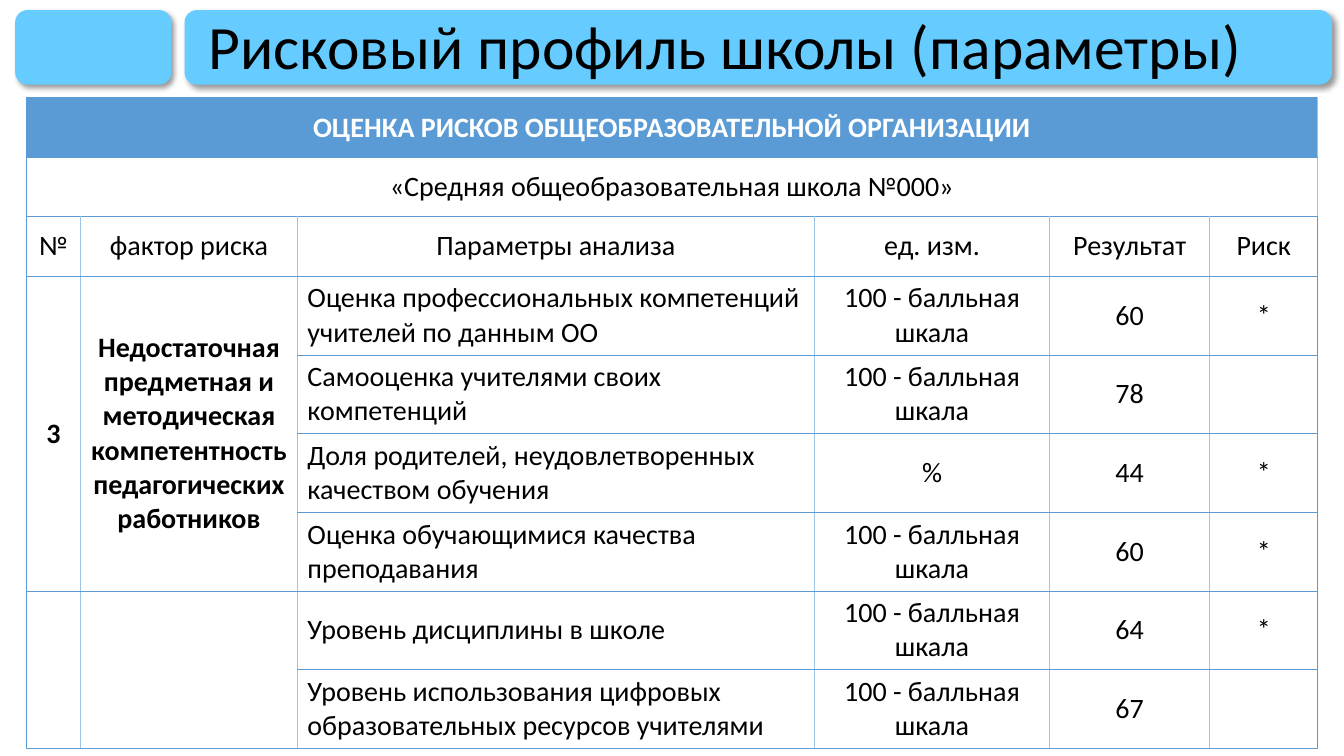
from dataclasses import dataclass

from lxml import etree
from pptx import Presentation
from pptx.dml.color import RGBColor
from pptx.enum import shapes, text
from pptx.oxml import ns
from pptx.util import Inches, Pt

FONT = "Calibri"
SKY, BLUE, PALE, BLACK, WHITE = "66CCFF", "5B9BD5", "9DC3E6", "000000", "FFFFFF"
SCALE = "100 - балльная шкала"
COLUMN_WIDTHS = [0.54, 2.15, 5.13, 2.33, 1.59, 1.07]
HEADINGS = ["№", "фактор риска", "Параметры анализа", "ед. изм.", "Результат", "Риск"]
BANNERS = ["ОЦЕНКА РИСКОВ ОБЩЕОБРАЗОВАТЕЛЬНОЙ ОРГАНИЗАЦИИ",
           "«Средняя общеобразовательная школа №000»"]
HEADER_ROWS = len(BANNERS) + 1


@dataclass
class Bar:
    left: float
    width: float


@dataclass
class Parameter:
    name: str
    unit: str
    result: str
    risk: str = ""


@dataclass
class Factor:
    number: str
    name: str
    parameters: list[Parameter]


BARS = [Bar(1.83, 11.38), Bar(0.15, 1.55)]
FACTORS = [
    Factor("3", "Недостаточная предметная и методическая компетентность "
                "педагогических работников", [
        Parameter("Оценка профессиональных компетенций учителей по данным ОО", SCALE, "60", "*"),
        Parameter("Самооценка учителями своих компетенций", SCALE, "78"),
        Parameter("Доля родителей, неудовлетворенных качеством обучения", "%", "44", "*"),
        Parameter("Оценка обучающимися качества преподавания", SCALE, "60", "*"),
    ]),
    Factor("", "", [
        Parameter("Уровень дисциплины в школе", SCALE, "64", "*"),
        Parameter("Уровень использования цифровых образовательных ресурсов учителями",
                  SCALE, "67"),
    ]),
]


def color(value: str) -> RGBColor:
    return RGBColor.from_string(value)


def add_child(parent, tag: str, **attributes):
    return etree.SubElement(parent, ns.qn(tag), attributes)


def add_run(paragraph, words: str, size: float, fill: str = BLACK, bold: bool = False) -> None:
    run = paragraph.add_run()
    run.text = words
    run.font.name, run.font.size, run.font.bold = FONT, Pt(size), bold
    run.font.color.rgb = color(fill)


def add_bar(slide, bar: Bar) -> None:
    shape = slide.shapes.add_shape(shapes.MSO_SHAPE.ROUNDED_RECTANGLE, Inches(bar.left),
                                   Inches(0.1), Inches(bar.width), Inches(0.74))
    shape.fill.solid()
    shape.fill.fore_color.rgb = color(SKY)
    shape.line.fill.background()
    shape.shadow.inherit = False
    effects = shape.element.spPr.find(ns.qn("a:effectLst"))
    shadow = add_child(effects, "a:outerShdw", blurRad=str(Pt(4)), dist=str(Pt(3)),
                       dir="2700000", algn="tl", rotWithShape="0")
    add_child(add_child(shadow, "a:srgbClr", val=BLACK), "a:alpha", val="40000")


def set_borders(cell, column: int) -> None:
    outer, inner = (BLUE, 0.5), (PALE, 1)
    borders = {
        "a:lnL": outer if column == 0 else inner,
        "a:lnR": outer if column == len(COLUMN_WIDTHS) - 1 else inner,
        "a:lnT": outer,
        "a:lnB": outer,
    }
    properties = cell._tc.get_or_add_tcPr()
    for tag, (value, width) in borders.items():
        line = add_child(properties, tag, w=str(Pt(width)))
        add_child(add_child(line, "a:solidFill"), "a:srgbClr", val=value)


def write_cell(cell, words: str, fill: str = BLACK, bold: bool = False,
               align=text.PP_ALIGN.CENTER) -> None:
    paragraph = cell.text_frame.paragraphs[0]
    paragraph.alignment = align
    if words:
        add_run(paragraph, words, 20, fill, bold)


def add_risk_table(slide) -> None:
    row_count = HEADER_ROWS + sum(len(factor.parameters) for factor in FACTORS)
    table = slide.shapes.add_table(row_count, len(COLUMN_WIDTHS), Inches(0.26), Inches(0.97),
                                   Inches(12.81), Inches(6.41)).table
    table.first_row = table.horz_banding = False
    for column, width in enumerate(COLUMN_WIDTHS):
        table.columns[column].width = Inches(width)
    for index, row in enumerate(table.rows):
        row.height = Inches(0.59 if index < HEADER_ROWS else 0.77)
        for column, cell in enumerate(row.cells):
            set_borders(cell, column)
            cell.vertical_anchor = text.MSO_ANCHOR.MIDDLE
            if index == 0:
                cell.fill.solid()
                cell.fill.fore_color.rgb = color(BLUE)
            else:
                cell.fill.background()

    # Full-width banners and column headings
    for index, words in enumerate(BANNERS):
        table.cell(index, 0).merge(table.cell(index, len(COLUMN_WIDTHS) - 1))
        write_cell(table.cell(index, 0), words, BLACK if index else WHITE, not index)
    for column, heading in enumerate(HEADINGS):
        write_cell(table.cell(len(BANNERS), column), heading)

    # Risk factors with their parameters
    first = HEADER_ROWS
    for factor in FACTORS:
        last = first + len(factor.parameters) - 1
        for column, words in enumerate([factor.number, factor.name]):
            table.cell(first, column).merge(table.cell(last, column))
            write_cell(table.cell(first, column), words, bold=True)
        for index, parameter in enumerate(factor.parameters, first):
            write_cell(table.cell(index, 2), parameter.name, align=text.PP_ALIGN.LEFT)
            for column, words in enumerate([parameter.unit, parameter.result, parameter.risk], 3):
                write_cell(table.cell(index, column), words)
        first = last + 1


def add_title(slide) -> None:
    title = slide.shapes.title
    title.left, title.top = Inches(1.97), Inches(0.16)
    title.width, title.height = Inches(11.1), Inches(0.66)
    title.element.getparent().append(title.element)  # in front of the bars
    frame = title.text_frame
    frame.word_wrap = True
    frame.auto_size = text.MSO_AUTO_SIZE.NONE
    frame.vertical_anchor = text.MSO_ANCHOR.MIDDLE
    paragraph = frame.paragraphs[0]
    paragraph.alignment = text.PP_ALIGN.LEFT
    paragraph.line_spacing = 0.9
    add_run(paragraph, "Рисковый профиль школы (параметры)", 44)


def main() -> None:
    presentation = Presentation()
    presentation.slide_width, presentation.slide_height = Inches(13.33), Inches(7.5)
    slide = presentation.slides.add_slide(presentation.slide_layouts[5])
    for bar in BARS:
        add_bar(slide, bar)
    add_title(slide)
    add_risk_table(slide)
    presentation.save("out.pptx")


if __name__ == "__main__":
    main()
